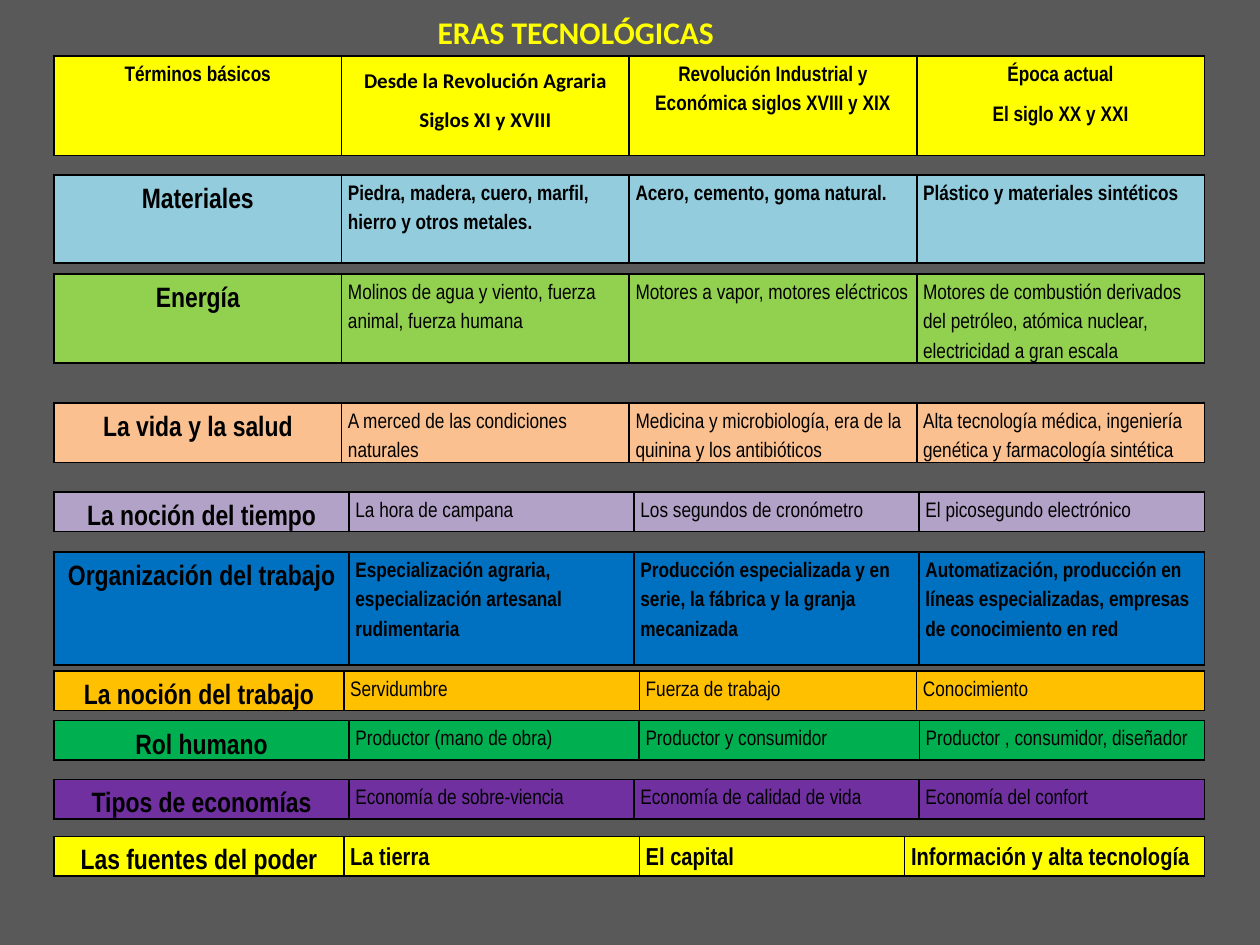
from lxml import etree
from pptx import Presentation
from pptx.dml.color import RGBColor
from pptx.enum import text
from pptx.oxml.ns import qn
from pptx.util import Pt

COLORS = {
    "background": "595959", "ink": "000000", "yellow": "FFFF00", "sky": "93CDDD",
    "lime": "92D050", "peach": "FAC090", "lilac": "B3A2C7", "blue": "0070C0",
    "amber": "FFC000", "green": "00B050", "purple": "7030A0",
}
LEFT, WIDTH = 30.9, 657.4
ALIGN = text.PP_ALIGN

# Widths of the first three columns; the last takes the rest
EVEN = (WIDTH / 4,) * 3
WIDE_LABEL = (168.6, 162.9, 162.9)

# Top, height, colour, columns, label, entries, differences in style
BANDS = [
    (100, 50.4, "sky", EVEN, "Materiales",
     ["Piedra, madera, cuero, marfil, hierro y otros metales.",
      "Acero, cemento, goma natural.",
      "Plástico y materiales sintéticos"], {"bold": True}),
    (156.6, 50.8, "lime", EVEN, "Energía",
     ["Molinos de agua y viento, fuerza animal, fuerza humana",
      "Motores a vapor, motores eléctricos",
      "Motores de combustión derivados del petróleo, atómica nuclear, "
      "electricidad a gran escala"], {}),
    (230.3, 34, "peach", EVEN, "La vida y la salud",
     ["A merced de las condiciones naturales",
      "Medicina y microbiología, era de la quinina y los antibióticos",
      "Alta tecnología médica, ingeniería genética y farmacología sintética"], {}),
    (281.2, 22.6, "lilac", WIDE_LABEL, "La noción del tiempo",
     ["La hora de campana", "Los segundos de cronómetro",
      "El picosegundo electrónico"], {}),
    (315.5, 64.5, "blue", WIDE_LABEL, "Organización del trabajo",
     ["Especialización agraria, especialización artesanal rudimentaria",
      "Producción especializada y en serie, la fábrica y la granja mecanizada",
      "Automatización, producción en líneas especializadas, "
      "empresas de conocimiento en red"], {"bold": True}),
    (383.4, 22.6, "amber", (165.6, 168.9, 158.4), "La noción del trabajo",
     ["Servidumbre", "Fuerza de trabajo", "Conocimiento"], {}),
    (411.7, 22.6, "green", (168.6, 165.8, 160.1), "Rol humano",
     ["Productor (mano de obra)", "Productor y consumidor",
      "Productor , consumidor, diseñador"], {}),
    (445.3, 22.6, "purple", WIDE_LABEL, "Tipos de economías",
     ["Economía de sobre-viencia", "Economía de calidad de vida",
      "Economía del confort"], {"justified": 3}),
    (477.9, 22.6, "yellow", (165.6, 168.9, 151.6), "Las fuentes del poder",
     ["La tierra", "El capital", "Información y alta tecnología"],
     {"bold": True, "size": 14, "justified": 2}),
]


class SlideBuilder:
    def __init__(self, presentation):
        self.slide = presentation.slides.add_slide(presentation.slide_layouts[5])
        fill = self.slide.background.fill
        fill.solid()
        fill.fore_color.rgb = self.color("background")

    def color(self, name):
        return RGBColor.from_string(COLORS[name])

    def run(self, paragraph, words, size, font="Arial Narrow", bold=True, color="ink"):
        run = paragraph.add_run()
        run.text = words
        run.font.size = Pt(size)
        run.font.name = font
        run.font.bold = bold
        run.font.color.rgb = self.color(color)

    def title(self, words, left, top, width, height):
        shape = self.slide.shapes.title
        shape.left, shape.top = Pt(left), Pt(top)
        shape.width, shape.height = Pt(width), Pt(height)
        frame = shape.text_frame
        frame.word_wrap = True
        frame.auto_size = text.MSO_AUTO_SIZE.NONE
        frame.vertical_anchor = text.MSO_ANCHOR.MIDDLE
        paragraph = frame.paragraphs[0]
        paragraph.alignment = ALIGN.CENTER
        self.run(paragraph, words, 18, "Calibri", color="yellow")

    def table(self, top, height, columns):
        shape = self.slide.shapes.add_table(
            1, 4, Pt(LEFT), Pt(top), Pt(WIDTH), Pt(height))
        table = shape.table
        table.first_row = table.horz_banding = False
        for column, width in zip(table.columns, (*columns, WIDTH - sum(columns))):
            column.width = Pt(width)
        return table

    def cell(self, cell, lines, fill, align, after=6, **style):
        cell.margin_left = cell.margin_right = Pt(3.6)
        cell.margin_top = cell.margin_bottom = 0
        frame = cell.text_frame
        for index, line in enumerate(lines):
            paragraph = frame.add_paragraph() if index else frame.paragraphs[0]
            paragraph.alignment = align
            paragraph.line_spacing = 1.5
            paragraph.space_before, paragraph.space_after = Pt(6), Pt(after)
            self.run(paragraph, line, **style)
        self.borders(cell)
        cell.fill.solid()
        cell.fill.fore_color.rgb = self.color(fill)

    def borders(self, cell):
        properties = cell._tc.get_or_add_tcPr()
        for side in ("a:lnL", "a:lnR", "a:lnT", "a:lnB"):
            line = etree.SubElement(properties, qn(side), w=str(Pt(1)))
            solid = etree.SubElement(line, qn("a:solidFill"))
            etree.SubElement(solid, qn("a:srgbClr"), val=COLORS["ink"])

    def header(self, top, height, headings):
        table = self.table(top, height, EVEN)
        for index, (lines, font) in enumerate(headings):
            self.cell(table.cell(0, index), lines, "yellow", ALIGN.CENTER,
                      after=0, size=12, font=font)

    def band(self, top, height, fill, columns, label, entries,
             bold=False, size=12, justified=0):
        table = self.table(top, height, columns)
        self.cell(table.cell(0, 0), [label], fill, ALIGN.CENTER, size=16)
        for index, entry in enumerate(entries):
            align = ALIGN.JUSTIFY if index < justified else ALIGN.LEFT
            self.cell(table.cell(0, index + 1), [entry], fill, align,
                      size=size, bold=bold)


def main():
    presentation = Presentation()
    presentation.slide_width, presentation.slide_height = Pt(720), Pt(540)
    builder = SlideBuilder(presentation)

    # Title and column headings
    builder.title("ERAS TECNOLÓGICAS", 229.7, 3.6, 198.7, 29)
    builder.header(32, 56.8, [
        (["Términos básicos"], "Arial Narrow"),
        (["Desde la Revolución Agraria Siglos XI y XVIII"], "Calibri"),
        (["Revolución Industrial y Económica siglos XVIII y XIX"], "Arial Narrow"),
        (["Época actual", "El siglo XX y XXI"], "Arial Narrow"),
    ])

    # One coloured band per topic
    for *band, style in BANDS:
        builder.band(*band, **style)

    presentation.save("out.pptx")


if __name__ == "__main__":
    main()
